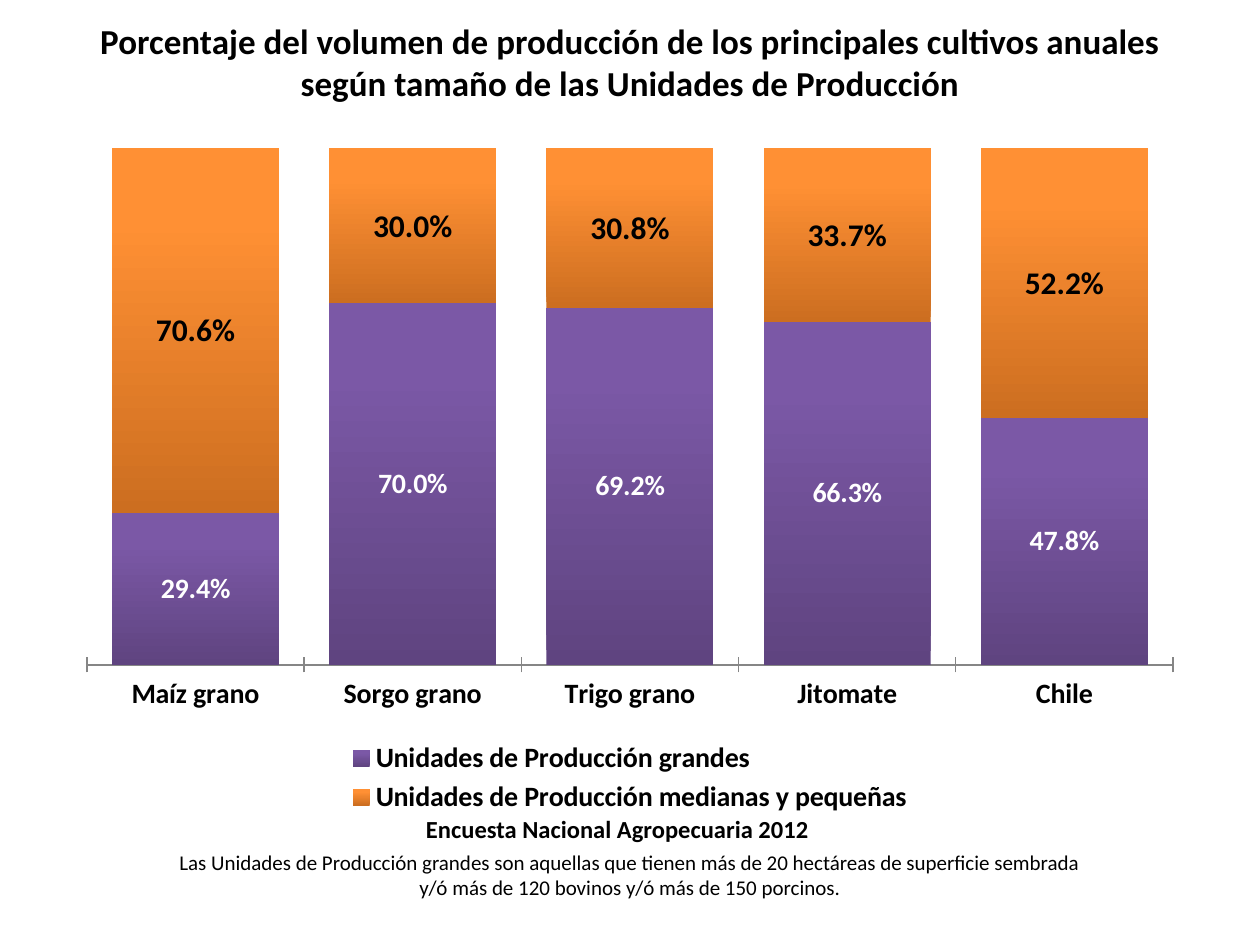
import copy

import lxml.etree
import pptx
import pptx.chart.data
import pptx.dml.color
import pptx.enum.chart
import pptx.enum.text
import pptx.oxml
import pptx.oxml.ns
import pptx.util

PX = 9144  # EMU per px, 100 px to the inch
FONT = "Calibri"
BLACK, WHITE = "000000", "FFFFFF"
AXIS_GRAY = "868686"
CENTER = pptx.enum.text.PP_ALIGN.CENTER

CROPS = ["Maíz grano", "Sorgo grano", "Trigo grano", "Jitomate", "Chile"]
# name, shares, gradient from bottom to top, label size, label colour
UNIT_SIZES = [
    ("Unidades de Producción grandes", [0.294, 0.7, 0.692, 0.663, 0.478],
     ["5F4480", "7B58A6", "7C57A8"], 16, WHITE),
    ("Unidades de Producción medianas y pequeñas", [0.706, 0.3, 0.308, 0.337, 0.522],
     ["CC6E20", "FF9034", "FF9136"], 18, BLACK),
]


def rgb(value):
    return pptx.dml.color.RGBColor.from_string(value)


def set_font(font, size, color=BLACK, bold=True):
    font.name = FONT
    font.size = pptx.util.Pt(size)
    font.bold = bold
    font.color.rgb = rgb(color)


def fill_gradient(series, colors):
    """Fill upwards with three colours, at 0, 80 and 100 percent."""
    fill = series.format.fill
    fill.gradient()
    fill.gradient_angle = 90
    stops = series._element.find(".//" + pptx.oxml.ns.qn("a:gsLst"))
    stops.append(copy.deepcopy(stops[-1]))
    for stop, position, color in zip(fill.gradient_stops, (0, 0.8, 1), colors):
        stop.position = position
        stop.color.rgb = rgb(color)


def place_in_chart(element, before, x, y, w, h, inner=False):
    """Give a plot area or legend a fixed place, in fractions of the chart."""
    qn = pptx.oxml.ns.qn
    for old in element.findall(qn("c:layout")):
        element.remove(old)
    layout = lxml.etree.Element(qn("c:layout"))
    manual = lxml.etree.SubElement(layout, qn("c:manualLayout"))
    settings = [("layoutTarget", "inner")] if inner else []
    settings += [("xMode", "edge"), ("yMode", "edge"), ("x", x), ("y", y), ("w", w), ("h", h)]
    for tag, value in settings:
        lxml.etree.SubElement(manual, qn("c:" + tag)).set("val", str(value))
    element.insert(before, layout)


class SlideBuilder:
    def __init__(self, slide):
        self.slide = slide

    def place(self, shape, x, y, w, h):
        shape.left, shape.top, shape.width, shape.height = (n * PX for n in (x, y, w, h))

    def set_lines(self, frame, lines, size, bold, wrap=True):
        frame.word_wrap = wrap
        frame.auto_size = pptx.enum.text.MSO_AUTO_SIZE.NONE
        frame.text = "\n".join(lines)
        for paragraph in frame.paragraphs:
            paragraph.alignment = CENTER
            set_font(paragraph.font, size, bold=bold)

    def title(self, box, lines, size):
        title = self.slide.shapes.title
        self.place(title, *box)
        self.set_lines(title.text_frame, lines, size, True)

    def text(self, box, line, size, bold=False, wrap=True):
        textbox = self.slide.shapes.add_textbox(*(n * PX for n in box))
        self.set_lines(textbox.text_frame, [line], size, bold, wrap)
        return textbox

    def stacked_chart(self, box, categories, groups):
        data = pptx.chart.data.CategoryChartData(number_format="0.0%")
        data.categories = categories
        for name, shares, *_ in groups:
            data.add_series(name, shares)
        chart = self.slide.shapes.add_chart(
            pptx.enum.chart.XL_CHART_TYPE.COLUMN_STACKED_100,
            *(n * PX for n in box), data).chart
        set_font(chart.font, 10, bold=False)
        chart.has_title = False

        plot = chart.plots[0]
        plot.gap_width, plot.overlap = 30, 100
        plot.vary_by_categories = False
        for series, (_, _, colors, size, label_color) in zip(plot.series, groups):
            fill_gradient(series, colors)
            labels = series.data_labels
            labels.show_value = True
            labels.number_format = "0.0%"
            labels.number_format_is_linked = False
            set_font(labels.font, size, label_color)

        set_font(chart.category_axis.tick_labels.font, 16)
        chart.category_axis.major_tick_mark = pptx.enum.chart.XL_TICK_MARK.CROSS
        chart.category_axis.format.line.color.rgb = rgb(AXIS_GRAY)
        chart.value_axis.has_major_gridlines = False
        chart.value_axis.maximum_scale = 1
        chart.value_axis.visible = False

        chart.has_legend = True
        chart.legend.position = pptx.enum.chart.XL_LEGEND_POSITION.BOTTOM
        chart.legend.include_in_layout = False
        set_font(chart.legend.font, 16)
        place_in_chart(chart.legend._element, 1, 0.25, 0.88, 0.5, 0.12)
        plot_area = chart._chartSpace.chart.plotArea
        place_in_chart(plot_area, 0, 0.02, 0.02, 0.96, 0.755, inner=True)


def main():
    deck = pptx.Presentation()
    deck.slide_width, deck.slide_height = 1000 * PX, 750 * PX
    builder = SlideBuilder(deck.slides.add_slide(deck.slide_layouts[5]))

    definition = builder.text(
        (128, 669, 744, 50),
        "Las Unidades de Producción grandes son aquellas que tienen más de 20 hectáreas "
        "de superficie sembrada y/ó más de 120 bovinos y/ó más de 150 porcinos.", 12)
    definition.fill.solid()
    definition.fill.fore_color.rgb = rgb(WHITE)
    builder.stacked_chart((51, 107, 898, 543), CROPS, UNIT_SIZES)
    builder.title(
        (0, 10, 1000, 77),
        ["Porcentaje del volumen de producción de los principales cultivos anuales",
         "según tamaño de las Unidades de Producción"], 20)
    builder.text((327, 641, 326, 34), "Encuesta Nacional Agropecuaria 2012", 14,
                 bold=True, wrap=False)
    deck.save("out.pptx")


if __name__ == "__main__":
    main()
